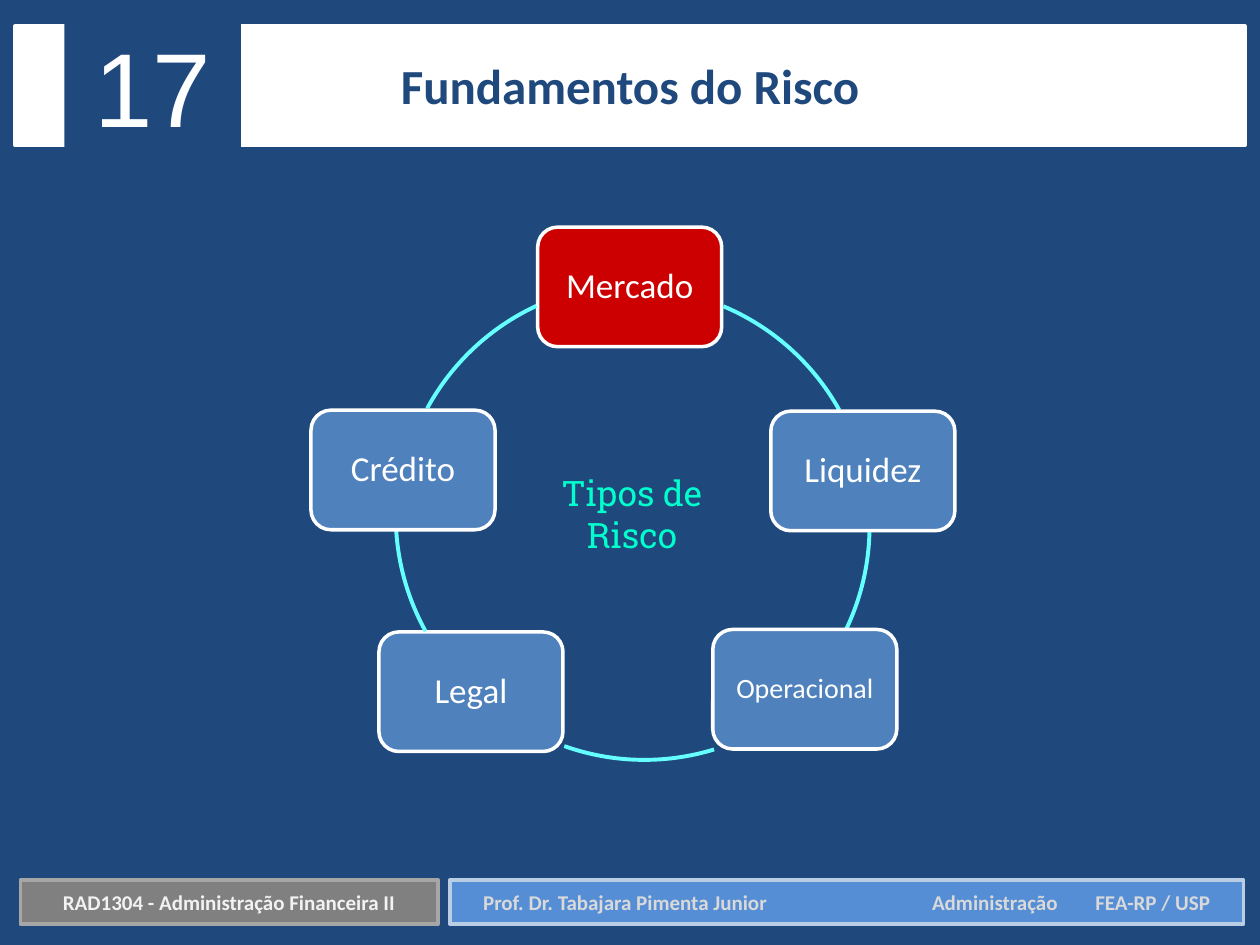
import math

import pptx
import pptx.util
import pptx.dml.color
import pptx.enum.shapes
import pptx.enum.text
import pptx.oxml.ns
from lxml import etree

Cm = pptx.util.Cm
Pt = pptx.util.Pt
qn = pptx.oxml.ns.qn
SHAPES = pptx.enum.shapes.MSO_SHAPE
ALIGN = pptx.enum.text.PP_ALIGN
MIDDLE = pptx.enum.text.MSO_ANCHOR.MIDDLE

COLORS = {
    "navy": "1F497D", "white": "FFFFFF", "red": "CC0000", "blue": "4F81BD",
    "ring": "66FFFF", "mint": "00FFCC", "course": "808080",
    "course_edge": "A6A6A6", "course_text": "F2F2F2", "author": "558ED5",
    "author_edge": "B9CDE5", "author_text": "D9D9D9",
}

# Risk type, left, top, fill, text size
RISKS = [
    ("Mercado", 10.84, 4.58, "red", 20),
    ("Liquidez", 15.54, 8.29, "blue", 20),
    ("Operacional", 14.37, 12.69, "blue", 16),
    ("Legal", 7.64, 12.74, "blue", 20),
    ("Crédito", 6.27, 8.27, "blue", 20),
]
RISK_WIDTH, RISK_HEIGHT = 3.71, 2.41

# Ring arc after each risk: centre x, centre y, start and end angle in degrees
ARCS = [
    (12.72, 10.61, -67.2, -29.2),
    (12.72, 10.61, 1.4, 25.4),
    (12.99, 10.51, 73, 109.6),
    (12.79, 10.4, 151.1, 176.5),
    (12.84, 10.53, 208.5, 245.1),
]
RING_RADIUS = 4.81


def rgb(name):
    return pptx.dml.color.RGBColor.from_string(COLORS[name])


def write(shape, text, size, color, font="Calibri", bold=False,
          align=ALIGN.CENTER):
    frame = shape.text_frame
    frame.text = text
    frame.word_wrap = True
    frame.vertical_anchor = MIDDLE
    paragraph = frame.paragraphs[0]
    paragraph.alignment = align
    for run in paragraph.runs:
        run.font.name = font
        run.font.size = Pt(size)
        run.font.bold = bold
        run.font.color.rgb = rgb(color)
    return paragraph


def add_panel(slide, box, fill, edge=None, kind=SHAPES.RECTANGLE):
    panel = slide.shapes.add_shape(kind, *map(Cm, box))
    panel.shadow.inherit = False
    panel.fill.solid()
    panel.fill.fore_color.rgb = rgb(fill)
    if edge:
        panel.line.color.rgb = rgb(edge)
        panel.line.width = Pt(2)
    else:
        panel.line.fill.background()
    return panel


def arc_points(start, end):
    """Bezier points of an arc, measured from the corner of the ring's box."""
    first, last = math.radians(start), math.radians(end)
    reach = 4 / 3 * math.tan((last - first) / 4)
    offsets = []
    for angle, pull in ((first, 0), (first, reach), (last, -reach), (last, 0)):
        offsets.append((math.cos(angle) - pull * math.sin(angle),
                        math.sin(angle) + pull * math.cos(angle)))
    return [(Cm(RING_RADIUS * (1 + x)), Cm(RING_RADIUS * (1 + y)))
            for x, y in offsets]


def add_arc(slide, center_x, center_y, start, end):
    points = arc_points(start, end)
    builder = slide.shapes.build_freeform(*points[0])
    builder.add_line_segments(points[-1:], close=False)
    arc = builder.convert_to_shape()

    # The box spans the whole ring, the outline is one curve within it
    arc.left, arc.top = Cm(center_x - RING_RADIUS), Cm(center_y - RING_RADIUS)
    arc.width = arc.height = Cm(2 * RING_RADIUS)
    outline = next(arc.element.iter(qn("a:path")))
    outline.set("w", str(arc.width))
    outline.set("h", str(arc.height))
    for part in list(outline):
        outline.remove(part)
    for tag, part_points in (("a:moveTo", points[:1]),
                             ("a:cubicBezTo", points[1:])):
        part = etree.SubElement(outline, qn(tag))
        for x, y in part_points:
            etree.SubElement(part, qn("a:pt"), x=str(x), y=str(y))

    arc.shadow.inherit = False
    arc.fill.background()
    arc.line.color.rgb = rgb("ring")
    arc.line.width = Pt(2.25)


def add_risk(slide, name, left, top, fill, size):
    risk = add_panel(slide, (left, top, RISK_WIDTH, RISK_HEIGHT), fill,
                     "white", SHAPES.ROUNDED_RECTANGLE)
    write(risk, name, size, "white").line_spacing = 0.9


def add_tab_stops(paragraph, positions):
    tabs = etree.SubElement(paragraph._p.get_or_add_pPr(), qn("a:tabLst"))
    for position in positions:
        etree.SubElement(tabs, qn("a:tab"), pos=str(Cm(position)), algn="l")


def add_header(slide):
    add_panel(slide, (0.3, 0.53, 24.8, 2.4), "white", "white")
    title = slide.shapes.title
    title.left, title.top, title.width, title.height = map(
        Cm, (5.9, 0.98, 13.6, 1.45))
    write(title, "Fundamentos do Risco", 28, "navy", bold=True)
    # Bring the title in front of the white band
    title.element.getparent().append(title.element)
    number = add_panel(slide, (1.3, 0.32, 3.56, 2.82), "navy")
    write(number, "17", 60, "white", "Arial")


def add_footer(slide):
    author = add_panel(slide, (9.07, 17.74, 16, 0.89), "author", "author_edge")
    author.text_frame.margin_left = Cm(0.67)
    line = write(author,
                 "Prof. Dr. Tabajara Pimenta Junior\tAdministração\tFEA-RP / USP",
                 12, "author_text", bold=True, align=ALIGN.LEFT)
    add_tab_stops(line, (9.05, 12.34))
    course = add_panel(slide, (0.41, 17.74, 8.42, 0.89), "course", "course_edge")
    write(course, "RAD1304 - Administração Financeira II", 12, "course_text",
          bold=True)


def main():
    deck = pptx.Presentation()
    deck.slide_width, deck.slide_height = Cm(25.4), Cm(19.05)
    slide = deck.slides.add_slide(deck.slide_layouts[5])
    slide.background.fill.solid()
    slide.background.fill.fore_color.rgb = rgb("navy")

    add_footer(slide)

    # Cycle of risk types around its caption
    caption = slide.shapes.add_textbox(Cm(10.82), Cm(9.37), Cm(3.84), Cm(1.96))
    write(caption, "Tipos de Risco", 20, "mint", "Roboto Slab")
    for risk, arc in zip(RISKS, ARCS):
        add_risk(slide, *risk)
        add_arc(slide, *arc)

    add_header(slide)
    deck.save("out.pptx")


if __name__ == "__main__":
    main()
